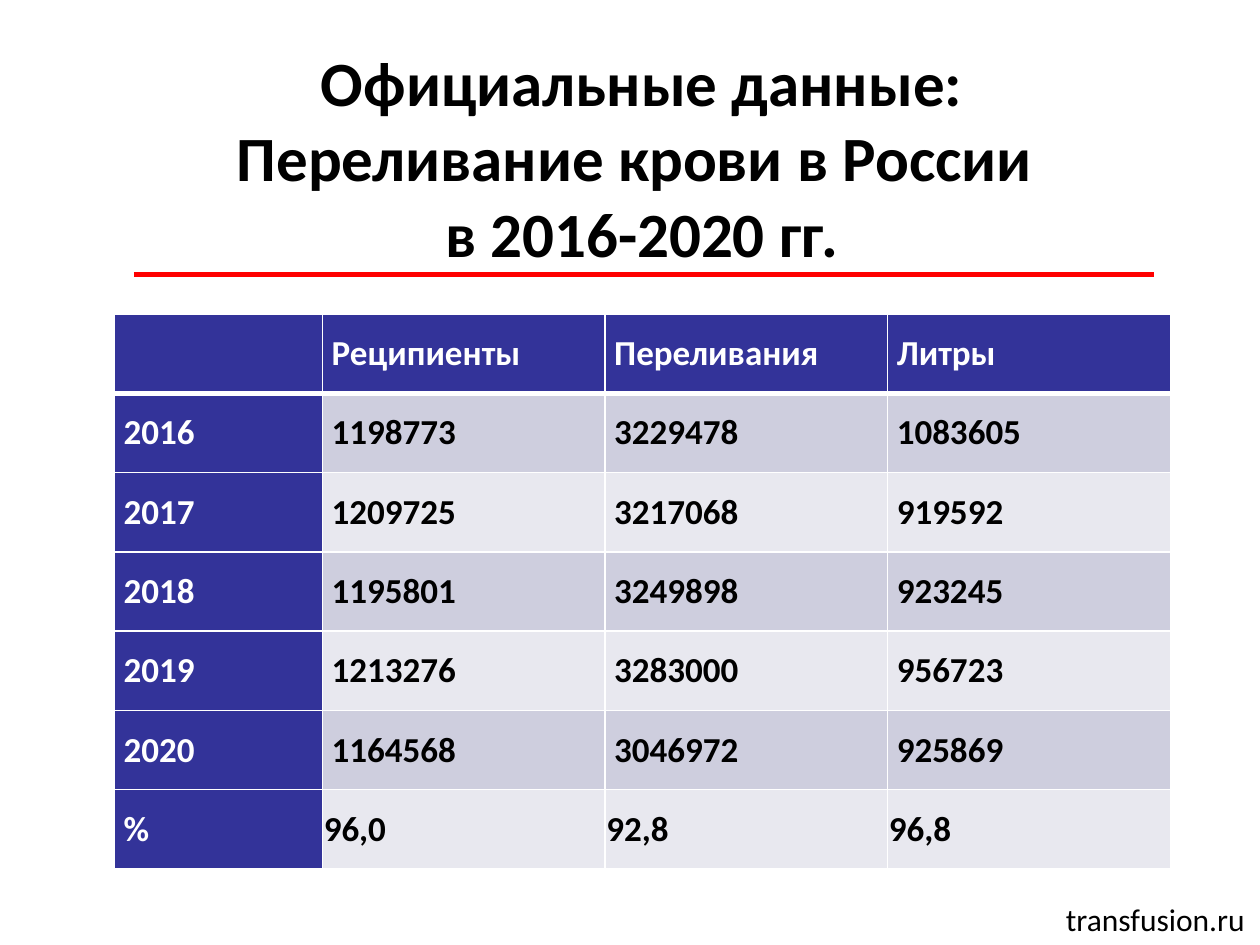
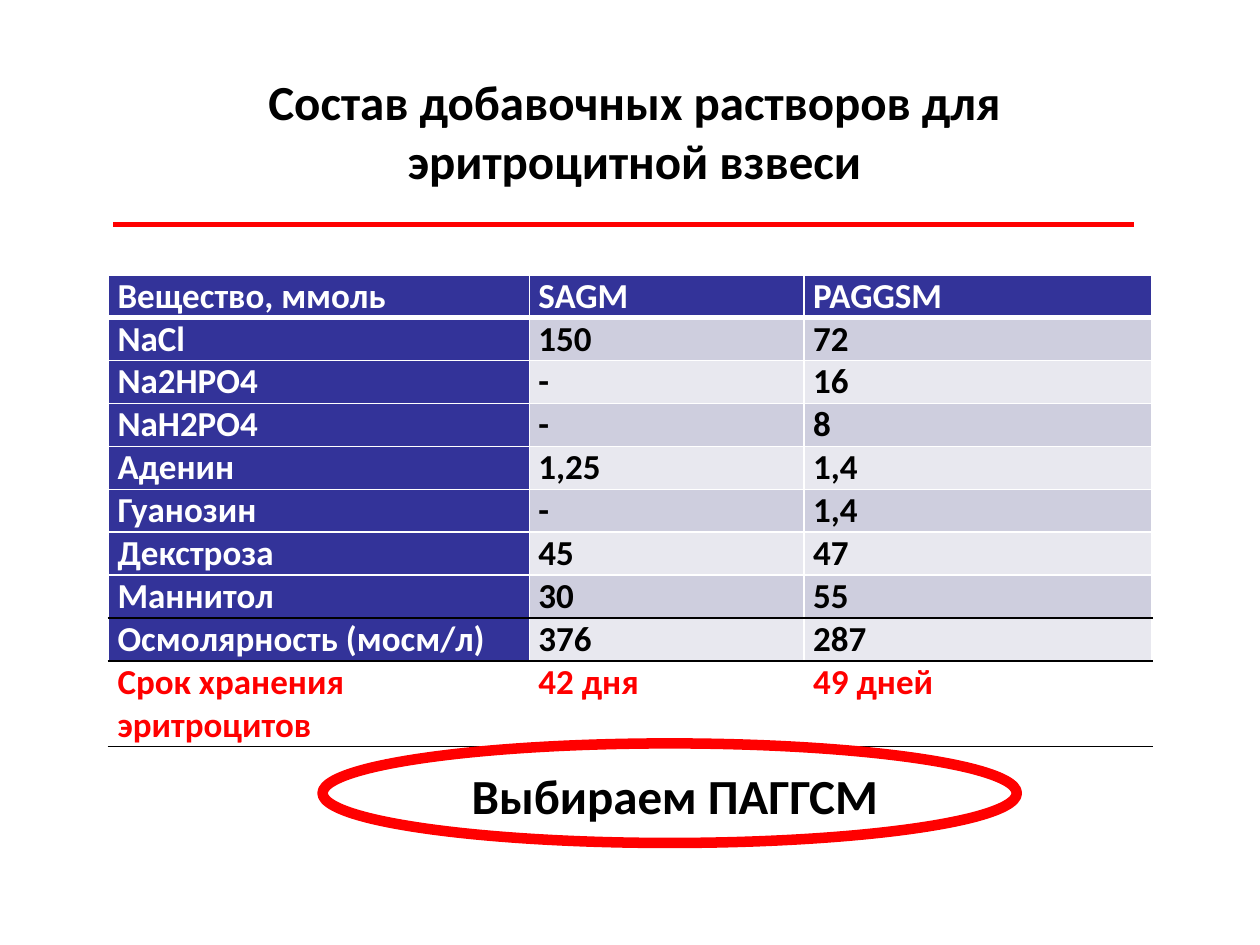
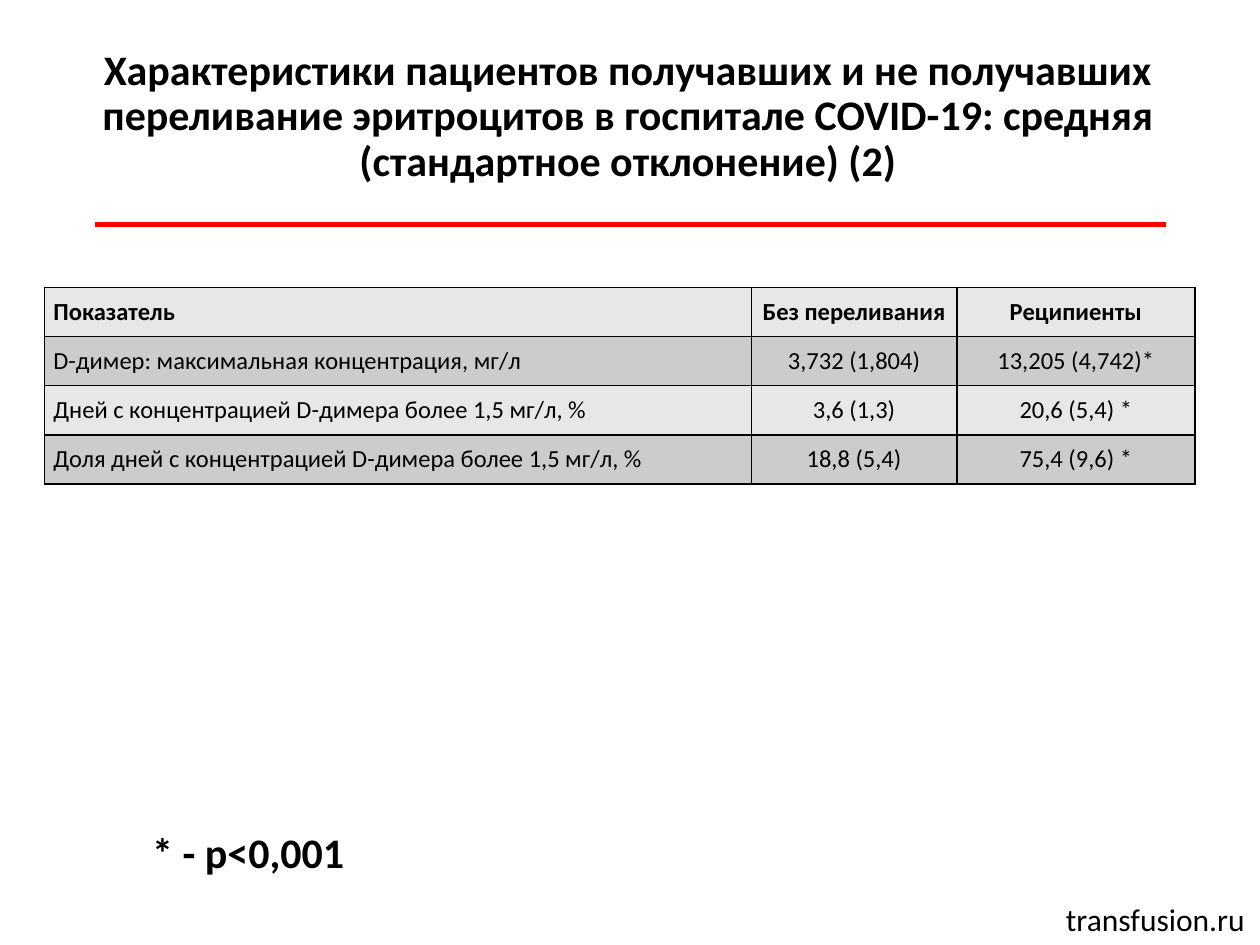
from dataclasses import dataclass

from lxml import etree
from pptx import Presentation
from pptx import util as u
from pptx.dml.color import RGBColor
from pptx.enum import shapes, text
from pptx.oxml import ns

BLACK = RGBColor(0x00, 0x00, 0x00)
WHITE = RGBColor(0xFF, 0xFF, 0xFF)
RED = RGBColor(0xFF, 0x00, 0x00)
INDIGO = RGBColor(0x33, 0x33, 0x99)
LILAC = RGBColor(0xCE, 0xCE, 0xDE)
PALE_LILAC = RGBColor(0xE8, 0xE8, 0xEF)
GREY = RGBColor(0xCC, 0xCC, 0xCC)
PALE_GREY = RGBColor(0xE7, 0xE7, 0xE7)
FONT = "Calibri"
PLAIN_TABLE = "{2D5ABB26-0587-4C30-8999-92F81FD0307C}"
LEFT, CENTER, JUSTIFY = text.PP_ALIGN.LEFT, text.PP_ALIGN.CENTER, text.PP_ALIGN.JUSTIFY
TOP, MIDDLE = text.MSO_ANCHOR.TOP, text.MSO_ANCHOR.MIDDLE


@dataclass
class Look:
    fill: RGBColor
    ink: RGBColor = BLACK
    bold: bool = True
    align: int = LEFT
    inset: float = 5.2


def indigo_look(row, column):
    if row == 0 or column == 0:
        return Look(INDIGO, WHITE)
    return Look(LILAC if row % 2 else PALE_LILAC)


def statistics_look(row, column):
    look = indigo_look(row, column)
    if row == 6 and column:
        look.inset = 0.72
    return look


def solution_look(row, column):
    return Look(None, RED) if row == 9 else indigo_look(row, column)


def patient_look(row, column):
    return Look(GREY if row % 2 else PALE_GREY, bold=row == 0, align=CENTER if column else LEFT)


class Deck:
    def __init__(self):
        self.deck = Presentation()
        self.deck.slide_width, self.deck.slide_height = u.Pt(720), u.Pt(540)
        self.page = None

    def new_page(self):
        self.page = self.deck.slides.add_slide(self.deck.slide_layouts[5])

    def add_lines(self, frame, lines, size, bold=True, ink=BLACK, align=LEFT):
        for index, line in enumerate(lines):
            para = frame.paragraphs[0] if index == 0 else frame.add_paragraph()
            para.alignment = align
            span = para.add_run()
            span.text = line
            span.font.name, span.font.size = FONT, u.Pt(size)
            span.font.bold, span.font.color.rgb = bold, ink

    def title(self, place, lines, size, anchor=TOP, wrap=True):
        box = self.page.shapes.title
        box.left, box.top, box.width, box.height = map(u.Pt, place)
        frame = box.text_frame
        frame.auto_size = text.MSO_AUTO_SIZE.NONE
        frame.word_wrap, frame.vertical_anchor = wrap, anchor
        self.add_lines(frame, lines, size, align=CENTER)
        return frame

    def label(self, place, words, size, bold=True, align=LEFT, wrap=False, indent=0):
        frame = self.page.shapes.add_textbox(*map(u.Pt, place)).text_frame
        frame.word_wrap = wrap
        self.add_lines(frame, [words], size, bold, align=align)
        if indent:
            frame.paragraphs[0]._p.get_or_add_pPr().set("indent", str(u.Pt(indent)))

    def footer(self):
        self.label((602, 511, 118, 29), "transfusion.ru", 18, bold=False)

    def rule(self, left, right, height):
        line = self.page.shapes.add_connector(
            shapes.MSO_CONNECTOR.STRAIGHT, u.Pt(left), u.Pt(height), u.Pt(right), u.Pt(height))
        line.line.color.rgb, line.line.width = RED, u.Pt(3)
        etree.SubElement(line._element.spPr, ns.qn("a:effectLst"))

    def ring(self, place):
        oval = self.page.shapes.add_shape(shapes.MSO_SHAPE.OVAL, *map(u.Pt, place))
        oval.shadow.inherit = False
        oval.fill.background()
        oval.line.color.rgb, oval.line.width = RED, u.Pt(6)

    def border(self, cell, sides):
        properties = cell._tc.get_or_add_tcPr()
        for index, (side, color, width) in enumerate(sides):
            line = etree.Element(ns.qn(f"a:ln{side}"), w=str(u.Pt(width)))
            fill = etree.SubElement(line, ns.qn("a:solidFill"))
            etree.SubElement(fill, ns.qn("a:srgbClr"), val=str(color))
            properties.insert(index, line)

    def table(self, left, top, widths, heights, rows, size, look_at,
              anchor=MIDDLE, grid=WHITE, header_line=3, black_lines=()):
        place = map(u.Pt, (left, top, sum(widths), sum(heights)))
        table = self.page.shapes.add_table(len(rows), len(widths), *place).table
        table._tbl.tblPr.find(ns.qn("a:tableStyleId")).text = PLAIN_TABLE
        for column, width in zip(table.columns, widths):
            column.width = u.Pt(width)
        for row, height in zip(table.rows, heights):
            row.height = u.Pt(height)
        for r, words in enumerate(rows):
            above, below = (BLACK if edge in black_lines else grid for edge in (r, r + 1))
            for c, word in enumerate(words):
                cell, look = table.cell(r, c), look_at(r, c)
                cell.vertical_anchor = anchor
                cell.margin_left = cell.margin_right = u.Pt(look.inset)
                cell.margin_top = cell.margin_bottom = 0
                if look.fill is None:
                    cell.fill.background()
                else:
                    cell.fill.solid()
                    cell.fill.fore_color.rgb = look.fill
                if word:
                    self.add_lines(cell.text_frame, [word], size, look.bold, look.ink, look.align)
                self.border(cell, [("L", grid, 1), ("R", grid, 1), ("T", above, 1),
                                   ("B", below, header_line if r == 0 else 1)])


def statistics_page(deck):
    deck.new_page()
    deck.title((126, 21, 481.5, 138.5),
               ["Официальные данные:", "Переливание крови в России ", "в 2016-2020 гг."], 36, wrap=False)
    deck.table(65.5, 179.5, [118.8] + [161.5] * 3, [45.3] * 7, [
        ("", "Реципиенты", "Переливания", "Литры"),
        ("2016", "1198773", "3229478", "1083605"),
        ("2017", "1209725", "3217068", "919592"),
        ("2018", "1195801", "3249898", "923245"),
        ("2019", "1213276", "3283000", "956723"),
        ("2020", "1164568", "3046972", "925869"),
        ("%", "96,0", "92,8", "96,8"),
    ], 20, statistics_look)
    deck.footer()
    deck.rule(76.5, 659.5, 156.7)


def solutions_page(deck):
    deck.new_page()
    deck.title((70.5, 37.5, 584, 75), ["Состав добавочных растворов для эритроцитной взвеси"], 28)
    deck.table(62, 157, [240.5, 157, 198.7], [24] * 9 + [48], [
        ("Вещество, ммоль", "SAGM", "PAGGSM"),
        ("NaCl", "150", "72"),
        ("Na2HPO4", "-", "16"),
        ("NaH2PO4", "-", "8"),
        ("Аденин", "1,25", "1,4"),
        ("Гуанозин", "-", "1,4"),
        ("Декстроза", "45", "47"),
        ("Маннитол", "30", "55"),
        ("Осмолярность (мосм/л)", "376", "287"),
        ("Срок хранения эритроцитов", "42 дня", "49 дней"),
    ], 20, solution_look, anchor=TOP, black_lines=(8, 9, 10))
    deck.label((93.6, 434, 584, 41), "Выбираем ПАГГСМ", 28, align=CENTER, wrap=True)
    deck.rule(64.8, 648, 128.2)
    deck.ring((184.3, 424.8, 396.7, 56.9))


def patients_page(deck):
    deck.new_page()
    frame = deck.title((51, 42.5, 615.6, 49), [
        "Характеристики пациентов получавших и не получавших переливание эритроцитов "
        "в госпитале COVID-19: средняя (стандартное отклонение) (2)"], 24, anchor=MIDDLE)
    frame.paragraphs[0].line_spacing = 0.9
    frame.paragraphs[0].space_after = u.Pt(6)
    deck.rule(54, 666, 128.2)
    deck.footer()
    deck.table(25.3, 164.2, [404, 117.5, 136], [28.1] * 4, [
        ("Показатель", "Без переливания", "Реципиенты"),
        ("D-димер: максимальная концентрация, мг/л", "3,732 (1,804)", "13,205 (4,742)*"),
        ("Дней с концентрацией D-димера более 1,5 мг/л, %", "3,6 (1,3)", "20,6 (5,4) *"),
        ("Доля дней с концентрацией D-димера более 1,5 мг/л, %", "18,8 (5,4)", "75,4 (9,6) *"),
    ], 14, patient_look, grid=BLACK, header_line=1)
    deck.label((44.6, 468.7, 161.3, 36), "* - p<0,001", 24, align=JUSTIFY, indent=35.3)


def main():
    deck = Deck()
    statistics_page(deck)
    solutions_page(deck)
    patients_page(deck)
    deck.deck.save("out.pptx")


if __name__ == "__main__":
    main()
